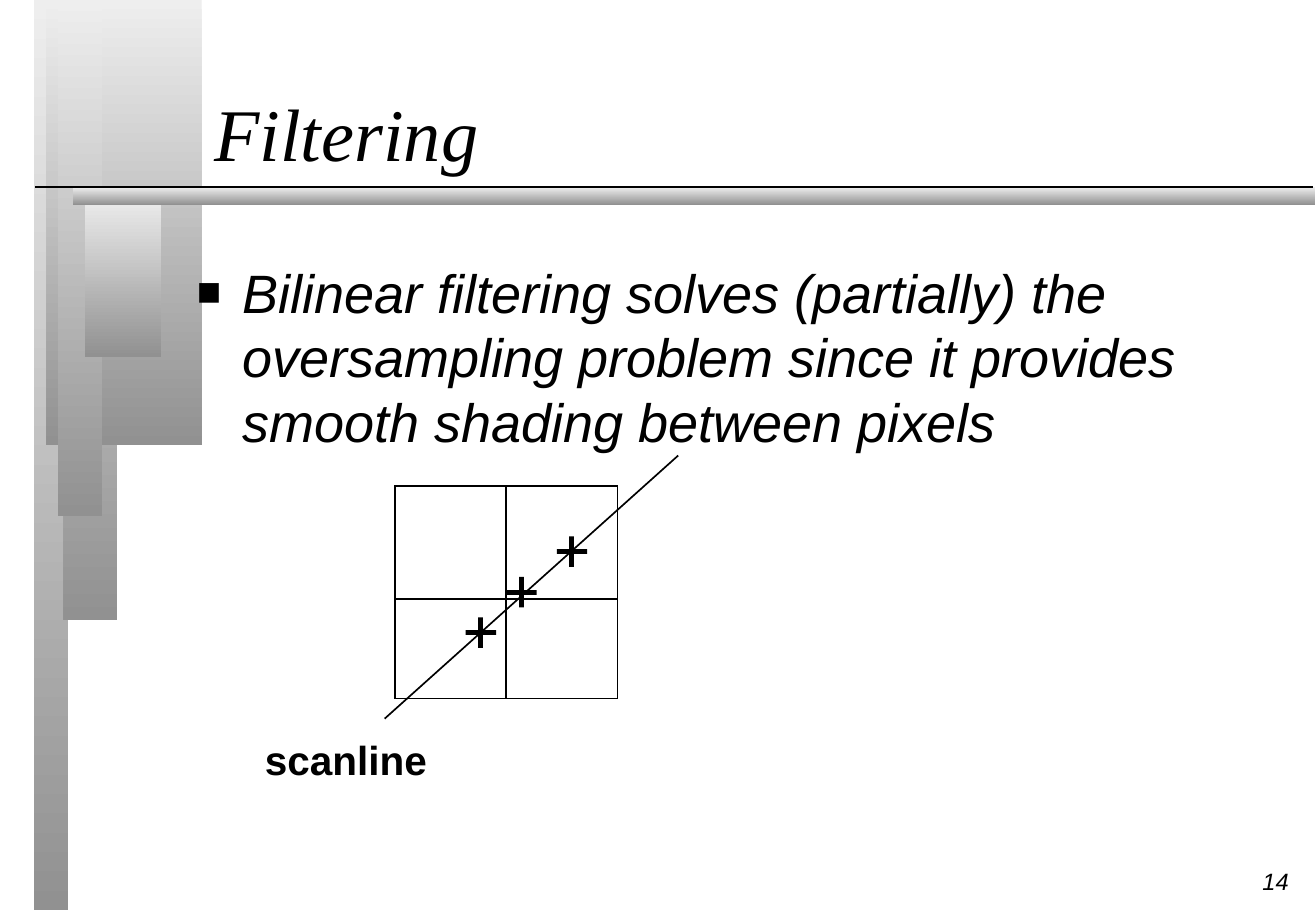
from pptx import Presentation
from pptx.dml.color import RGBColor
from pptx.enum.shapes import MSO_CONNECTOR, MSO_SHAPE
from pptx.enum.text import MSO_ANCHOR, MSO_AUTO_SIZE, PP_ALIGN
from pptx.oxml.ns import qn
from pptx.util import Pt
from lxml.etree import SubElement

BLACK = "000000"
BANDS = [
    (20, 0, 20.5, 539.5),
    (37.5, 0, 32, 367.5),
    (27.5, 0, 92, 264),
    (34.5, 0, 26, 306),
    (50.5, 115, 45, 96.5),
    (43.5, 111, 736, 10.5),
]
SAMPLES = [(276, 366), (330, 318), (300, 342)]


def color(code):
    return RGBColor.from_string(code)


def place(shape, left, top, width, height):
    shape.left, shape.top = Pt(left), Pt(top)
    shape.width, shape.height = Pt(width), Pt(height)


def style(frame, text, font, size, align, anchor, bold=False, italic=False):
    frame.text = text
    frame.vertical_anchor = anchor
    para = frame.paragraphs[0]
    para.alignment = align
    face = para.runs[0].font
    face.name, face.size = font, Pt(size)
    face.bold, face.italic = bold, italic
    face.color.rgb = color(BLACK)
    return para


def bullet(para, char, size, indent):
    props = para._p.get_or_add_pPr()
    props.set("marL", str(Pt(indent)))
    props.set("indent", str(-Pt(indent)))
    tint = SubElement(props, qn("a:buClr"))
    SubElement(tint, qn("a:srgbClr"), val=BLACK)
    SubElement(props, qn("a:buSzPct"), val=str(size * 1000))
    SubElement(props, qn("a:buFont"), typeface="Arial")
    SubElement(props, qn("a:buChar"), char=char)


def band(slide, box):
    shape = slide.shapes.add_shape(MSO_SHAPE.RECTANGLE, *map(Pt, box))
    shape.shadow.inherit = False
    shape.line.fill.background()
    shape.fill.gradient()
    shape.fill.gradient_angle = 270
    for stop, code in zip(shape.fill.gradient_stops, ("EEEEEE", "919191")):
        stop.color.rgb = color(code)


def outline(slide, kind, box, width):
    shape = slide.shapes.add_shape(kind, *map(Pt, box))
    shape.shadow.inherit = False
    shape.fill.background()
    shape.line.color.rgb = color(BLACK)
    shape.line.width = Pt(width)
    SubElement(shape.line._get_or_add_ln(), qn("a:miter"), lim="800000")
    return shape


def line(slide, *ends):
    link = slide.shapes.add_connector(MSO_CONNECTOR.STRAIGHT, *map(Pt, ends))
    link.line.color.rgb = color(BLACK)
    link.line.width = Pt(1)
    SubElement(link._element.spPr, qn("a:effectLst"))
    return link


def label(slide, box, text, size, align, **face):
    frame = slide.shapes.add_textbox(*map(Pt, box)).text_frame
    frame.word_wrap = False
    frame.auto_size = MSO_AUTO_SIZE.SHAPE_TO_FIT_TEXT
    style(frame, text, "Arial", size, align, MSO_ANCHOR.MIDDLE, **face)


def heading(slide):
    title = slide.shapes.title
    place(title, 120, 18, 606, 90)
    title.text_frame.auto_size = MSO_AUTO_SIZE.NONE
    style(title.text_frame, "Filtering", "Times New Roman", 44,
          PP_ALIGN.LEFT, MSO_ANCHOR.BOTTOM, italic=True)
    slide.shapes._spTree.append(title._element)


def content(slide):
    body = slide.placeholders[1]
    place(body, 109.5, 150, 610.5, 330)
    body.text_frame.auto_size = MSO_AUTO_SIZE.NONE
    para = style(body.text_frame,
                 "Bilinear filtering solves (partially) the oversampling "
                 "problem since it provides smooth shading between pixels",
                 "Arial", 32, PP_ALIGN.LEFT, MSO_ANCHOR.TOP, italic=True)
    para.space_before = Pt(6.4)
    bullet(para, "■", 75, 27)
    slide.shapes._spTree.append(body._element)


def diagram(slide):
    grid = outline(slide, MSO_SHAPE.RECTANGLE, (234, 288, 132, 126), 1)
    split = line(slide, 300, 288, 300, 414)
    split.begin_connect(grid, 0)
    split.end_connect(grid, 2)
    line(slide, 234, 355, 366, 355)
    for left, top in SAMPLES:
        cross = outline(slide, MSO_SHAPE.CROSS, (left, top, 18, 18), 3)
        cross.adjustments[0] = 0.5
    line(slide, 228, 426, 402, 270)
    label(slide, (145, 432, 120, 36), "scanline", 24, PP_ALIGN.CENTER, bold=True)


def main():
    deck = Presentation()
    deck.slide_width, deck.slide_height = Pt(780), Pt(540)
    slide = deck.slides.add_slide(deck.slide_layouts[1])
    for box in BANDS:
        band(slide, box)
    line(slide, 21, 111, 778.5, 111)
    label(slide, (740, 510.5, 31, 24), "14", 14, PP_ALIGN.RIGHT, italic=True)
    heading(slide)
    content(slide)
    diagram(slide)
    deck.save("out.pptx")


if __name__ == "__main__":
    main()
